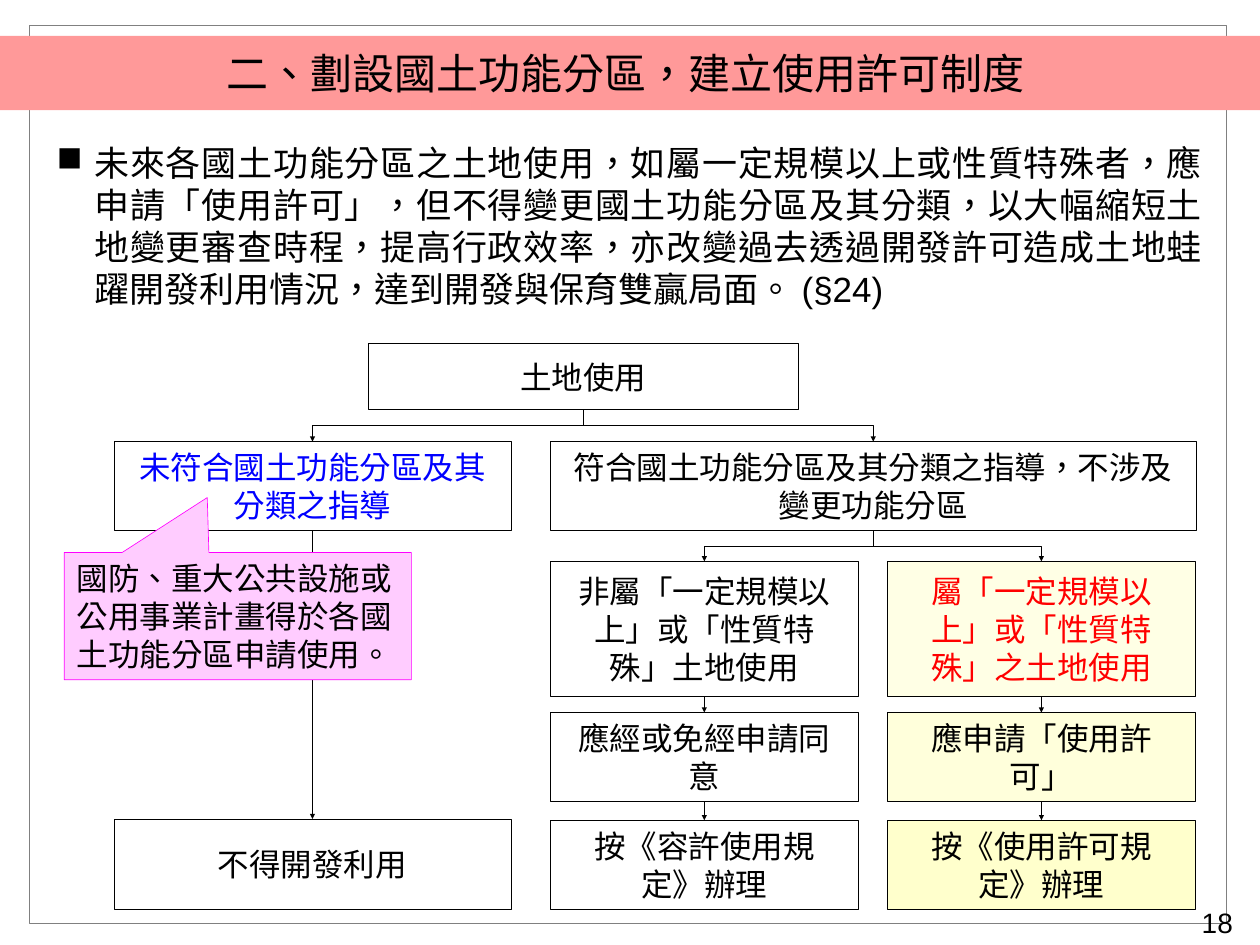
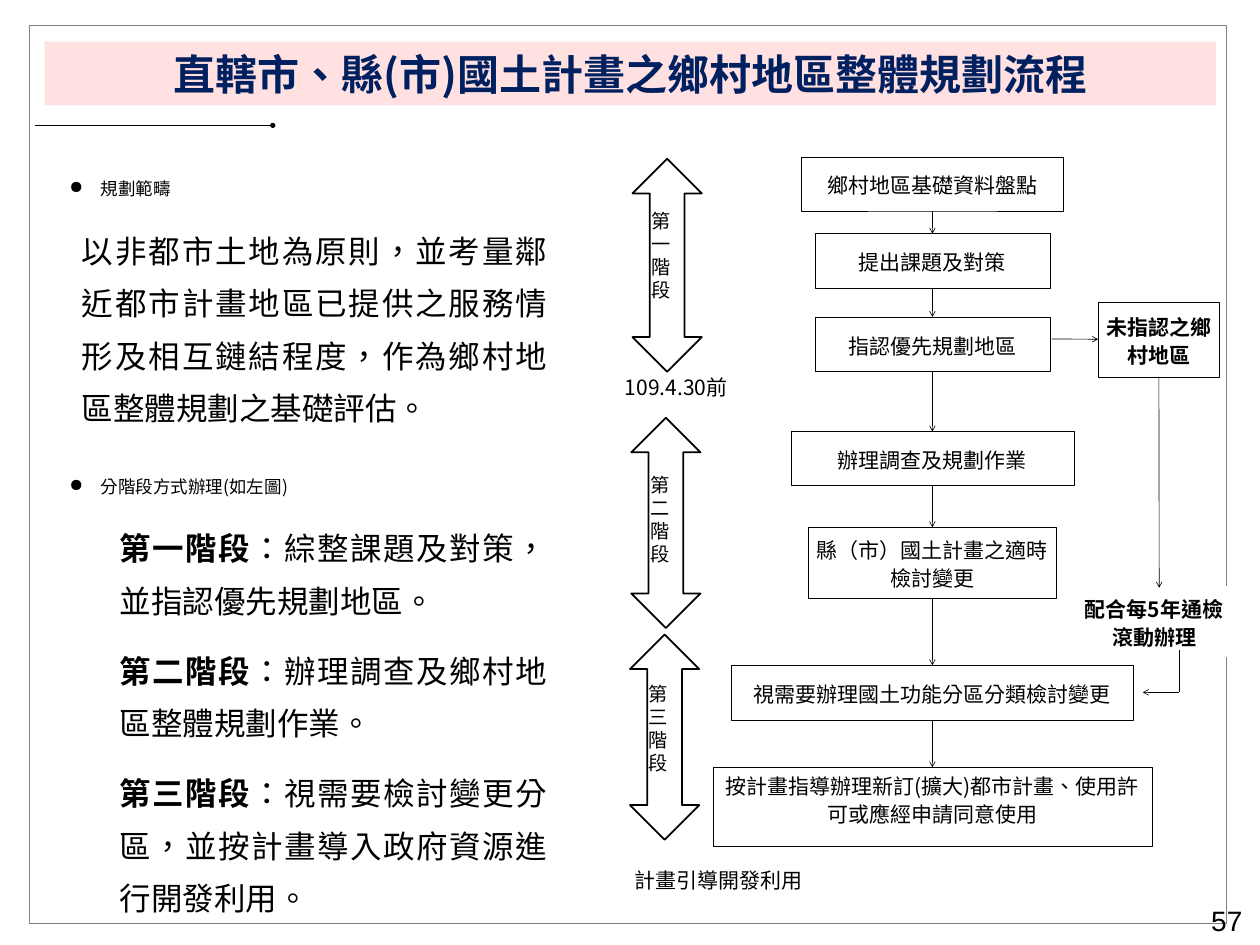
from lxml import etree
from pptx import Presentation, util as u
from pptx.dml.color import RGBColor
from pptx.enum import lang, shapes, text
from pptx.oxml.ns import qn

COLS, ROWS = 20, 15
SANS, ARIAL, CALI = "Noto Sans CJK SC", "Arial", "Calibri"
INK, GRAY, WHITE, CREAM = "000000", "808080", "FFFFFF", "FFFFCC"
WIDE, SLIM = (0.2, 0.1), (0.1, 0.05)
LEFT, MID, RIGHT, JUST = (text.PP_ALIGN.LEFT, text.PP_ALIGN.CENTER,
                          text.PP_ALIGN.RIGHT, text.PP_ALIGN.JUSTIFY)
RECT = shapes.MSO_SHAPE.RECTANGLE
LEAD = 1.2


def hue(code):
    return RGBColor.from_string(code)


class Deck:
    def __init__(self):
        self.file = Presentation()
        self.file.slide_width, self.file.slide_height = u.Inches(20), u.Inches(15)
        self.slide = None

    def x(self, cols):
        return round(self.file.slide_width * cols / COLS)

    def y(self, rows):
        return round(self.file.slide_height * rows / ROWS)

    def area(self, at):
        left, top, width, height = at
        return self.x(left), self.y(top), self.x(width), self.y(height)

    def page(self, number, right, top):
        self.slide = self.file.slides.add_slide(self.file.slide_layouts[6])
        self.box((0.46, 0.41, 19, 14.24), edge=GRAY)
        self.say(self.note((right - 2, top, 2, 0.7), WIDE), number, 32, ARIAL, align=RIGHT)

    def title(self, at, words, fill, ink=INK, bold=False):
        band = self.box(at, fill=fill, edge=None)
        self.say(band, [(words, bold)], 48, ink=ink, align=MID)

    def frame(self, shape, pad, anchor):
        body = shape.text_frame
        body.word_wrap = True
        body.vertical_anchor = anchor
        body.margin_left = body.margin_right = self.x(pad[0])
        body.margin_top = body.margin_bottom = self.y(pad[1])
        return shape

    def box(self, at, kind=RECT, fill=None, alpha=None, edge=INK, width=0.75,
            pad=WIDE, anchor=text.MSO_ANCHOR.MIDDLE):
        shape = self.slide.shapes.add_shape(kind, *self.area(at))
        shape.shadow.inherit = False
        if fill:
            shape.fill.solid()
            shape.fill.fore_color.rgb = hue(fill)
        else:
            shape.fill.background()
        if alpha:
            tint = shape.element.spPr.find(qn("a:solidFill"))[0]
            etree.SubElement(tint, qn("a:alpha")).set("val", str(alpha * 1000))
        if edge:
            shape.line.color.rgb = hue(edge)
            shape.line.width = u.Pt(width)
        else:
            shape.line.fill.background()
        return self.frame(shape, pad, anchor)

    def note(self, at, pad=SLIM):
        return self.frame(self.slide.shapes.add_textbox(*self.area(at)), pad,
                          text.MSO_ANCHOR.TOP)

    def say(self, shape, runs, size, font=SANS, ink=INK, align=LEFT, lead=None,
            gap=0, mark=None, indent=(0, 0), level=0):
        body = shape.text_frame
        para = body.paragraphs[0]
        if para.runs:
            para = body.add_paragraph()
        para.alignment, para.level = align, level
        para.space_before = u.Pt(gap)
        if lead:
            para.line_spacing = u.Pt(lead)
        props = para._p.get_or_add_pPr()
        props.set("marL", str(self.x(indent[0])))
        props.set("indent", str(self.x(indent[1])))
        if mark:
            etree.SubElement(props, qn("a:buChar")).set("char", mark)
        for words, bold in [(runs, False)] if isinstance(runs, str) else runs:
            run = para.add_run()
            run.text = words
            run.font.size, run.font.bold, run.font.name = u.Pt(size), bold, font
            run.font.color.rgb = hue(ink)
            run.font.language_id = lang.MSO_LANGUAGE_ID.TRADITIONAL_CHINESE
            east = etree.SubElement(run._r.get_or_add_rPr(), qn("a:ea"))
            east.set("typeface", SANS)

    def link(self, start, end, tip="triangle", bend=False, site=0):
        kind = shapes.MSO_CONNECTOR.ELBOW if bend else shapes.MSO_CONNECTOR.STRAIGHT
        wire = self.slide.shapes.add_connector(kind, 0, 0, 0, 0)
        if isinstance(start, tuple):
            wire.begin_x, wire.begin_y = self.x(start[0]), self.y(start[1])
        else:
            wire.begin_connect(start, 2)
        if isinstance(end, tuple):
            wire.end_x, wire.end_y = self.x(end[0]), self.y(end[1])
        else:
            wire.end_connect(end, site)
        if bend:
            self.turn(wire)
        wire.line.color.rgb = hue(INK)
        wire.line.width = u.Pt(0.75)
        if tip:
            tail = etree.SubElement(wire.line._get_or_add_ln(), qn("a:tailEnd"))
            tail.set("type", tip)
            if tip == "triangle":
                tail.set("w", "med")
        etree.SubElement(wire.element.spPr, qn("a:effectLst"))

    def turn(self, wire):
        run, drop = wire.end_x - wire.begin_x, wire.end_y - wire.begin_y
        midx, midy = wire.begin_x + run // 2, wire.begin_y + drop // 2
        wire.width, wire.height = drop, abs(run)
        wire.left, wire.top = midx - drop // 2, midy - abs(run) // 2
        form = wire.element.spPr.xfrm
        form.rot, form.flipH, form.flipV = (270 if run > 0 else 90), run > 0, False


def permit(deck):
    deck.page("18", 19.77, 14.27)
    deck.title((0, 0.57, 20, 1.18), "二、劃設國土功能分區，建立使用許可制度 ", "FF9999")

    def cell(at, words, ink=INK, **look):
        shape = deck.box(at, **look)
        deck.say(shape, words, 36, ink=ink, align=MID, lead=36 * LEAD)
        return shape

    fit = cell((8.73, 7.01, 10.26, 1.41), "符合國土功能分區及其分類之指導，不涉及變更功能分區")
    rows = [(8.91, 2.14), (11.31, 1.41), (13.02, 1.41)]
    lanes = [
        (8.74, [("非屬「一定規模以上」或「性質特殊」土地使用", INK, {}),
                ("應經或免經申請同意", INK, {}),
                ("按《容許使用規定》辦理", INK, {})]),
        (14.09, [("屬「一定規模以上」或「性質特殊」之土地使用", "FF0000",
                  {"fill": CREAM, "alpha": 50}),
                 ("應申請「使用許可」", INK, {"fill": CREAM, "alpha": 70}),
                 ("按《使用許可規定》辦理", INK, {"fill": CREAM})]),
    ]
    for left, steps in lanes:
        last = fit
        for (top, height), (words, ink, look) in zip(rows, steps):
            step = cell((left, top, 4.88, height), words, ink, **look)
            deck.link(last, step, bend=last is fit)
            last = step

    land = cell((5.84, 5.45, 6.83, 1.05), "土地使用")
    unfit = cell((1.81, 7.01, 6.3, 1.41), "未符合國土功能分區及其分類之指導", "0000FF")
    for branch in (fit, unfit):
        deck.link(land, branch, bend=True)
    deck.link(unfit, cell((1.81, 13, 6.3, 1.43), "不得開發利用"))

    call = deck.box((1.02, 8.77, 5.51, 2.02), shapes.MSO_SHAPE.RECTANGULAR_CALLOUT,
                    fill="FFCCFF", edge="FF00FF")
    call.adjustments[0], call.adjustments[1] = -0.088, -0.932
    deck.say(call, "國防、重大公共設施或公用事業計畫得於各國土功能分區申請使用。",
             36, ARIAL, lead=36 * LEAD)
    deck.say(deck.note((0.7, 2.15, 18.59, 2.87), WIDE),
             "未來各國土功能分區之土地使用，如屬一定規模以上或性質特殊者，應申請「使用許可」，"
             "但不得變更國土功能分區及其分類，以大幅縮短土地變更審查時程，提高行政效率，"
             "亦改變過去透過開發許可造成土地蛙躍開發利用情況，達到開發與保育雙贏局面。 (§24)",
             40, ARIAL, align=JUST, lead=40 * LEAD, mark="■", indent=(0.6, -0.6))


def rural(deck):
    deck.page("57", 19.92, 14.24)
    scope = deck.note((0.7, 2.23, 8.19, 12.35), WIDE)
    head = {"size": 20, "mark": "●", "indent": (0.7, -0.5)}
    main = {"size": 36, "indent": (0.4, 0)}
    sub = {"size": 36, "indent": (1, 0), "level": 1}
    for runs, look in [
        ("規劃範疇", head),
        ("以非都市土地為原則，並考量鄰近都市計畫地區已提供之服務情形及相互鏈結程度，"
         "作為鄉村地區整體規劃之基礎評估。", main),
        ("分階段方式辦理(如左圖)", head),
        ([("第一階段", True), ("：綜整課題及對策，並指認優先規劃地區。", False)], sub),
        ([("第二階段", True), ("：辦理調查及鄉村地區整體規劃作業。", False)], sub),
        ([("第三階段", True),
          ("：視需要檢討變更分區，並按計畫導入政府資源進行開發利用。", False)], sub),
    ]:
        deck.say(scope, runs, align=JUST, lead=60, gap=20, **look)
    deck.link((0.55, 1.99), (4.33, 1.99), "oval")

    for left, top, height, down, words in [
        (10.04, 2.52, 3.38, 0.75, "第一階段"),
        (10.02, 6.63, 3.34, 0.83, "第二階段"),
        (10, 10.07, 3.26, 0.71, "第三階段"),
    ]:
        deck.box((left, top, 1.1, height), shapes.MSO_SHAPE.UP_DOWN_ARROW, fill=WHITE, width=2)
        deck.say(deck.note((left + 0.2, top + down, 0.78, 2.28)), words, 22, CALI,
                 lead=22 * LEAD)
    for left, top, words in [(9.82, 5.9, "109.4.30前"), (9.97, 13.72, "計畫引導開發利用")]:
        deck.say(deck.note((left, top, 3.22, 0.73)), words, 24, lead=24 * LEAD)

    def cell(at, words, bold=False, **look):
        shape = deck.box(at, fill=WHITE, width=0.5, pad=SLIM, **look)
        deck.say(shape, [(words, bold)], 24, align=MID, lead=32)
        return shape

    last = None
    for top, width, height, words, look in [
        (2.49, 4.15, 0.86, "鄉村地區基礎資料盤點", {}),
        (3.71, 3.73, 0.86, "提出課題及對策", {}),
        (5.03, 3.73, 0.87, "指認優先規劃地區", {}),
        (6.85, 4.49, 0.86, "辦理調查及規劃作業", {}),
        (8.37, 3.93, 1.12, "縣（市）國土計畫之適時檢討變更", {}),
        (10.56, 6.39, 0.87, "視需要辦理國土功能分區分類檢討變更", {}),
        (12.18, 6.97, 1.25, "按計畫指導辦理新訂(擴大)都市計畫、使用許可或應經申請同意使用",
         {"anchor": text.MSO_ANCHOR.TOP}),
    ]:
        step = cell((14.8 - width / 2, top, width, height), words, **look)
        if last:
            deck.link(last, step, "arrow")
        last = step

    rest = cell((17.43, 4.79, 1.93, 1.19), "未指認之鄉村地區", True)
    cell((17.05, 9.3, 2.54, 1.13), "配合每5年通檢滾動辦理", True, edge=None)
    deck.link((16.7, 5.38), rest, "arrow", site=1)
    deck.link(rest, (18.4, 9.33), "arrow")
    deck.link((18.72, 10.32), (18.72, 10.99), None)
    deck.link((18.72, 10.99), (18.14, 10.99), "arrow")
    deck.title((0.71, 0.66, 18.59, 1.01), "直轄市、縣(市)國土計畫之鄉村地區整體規劃流程",
               "FFE1E1", "002060", True)


def main():
    deck = Deck()
    permit(deck)
    rural(deck)
    deck.file.save("out.pptx")


if __name__ == "__main__":
    main()
